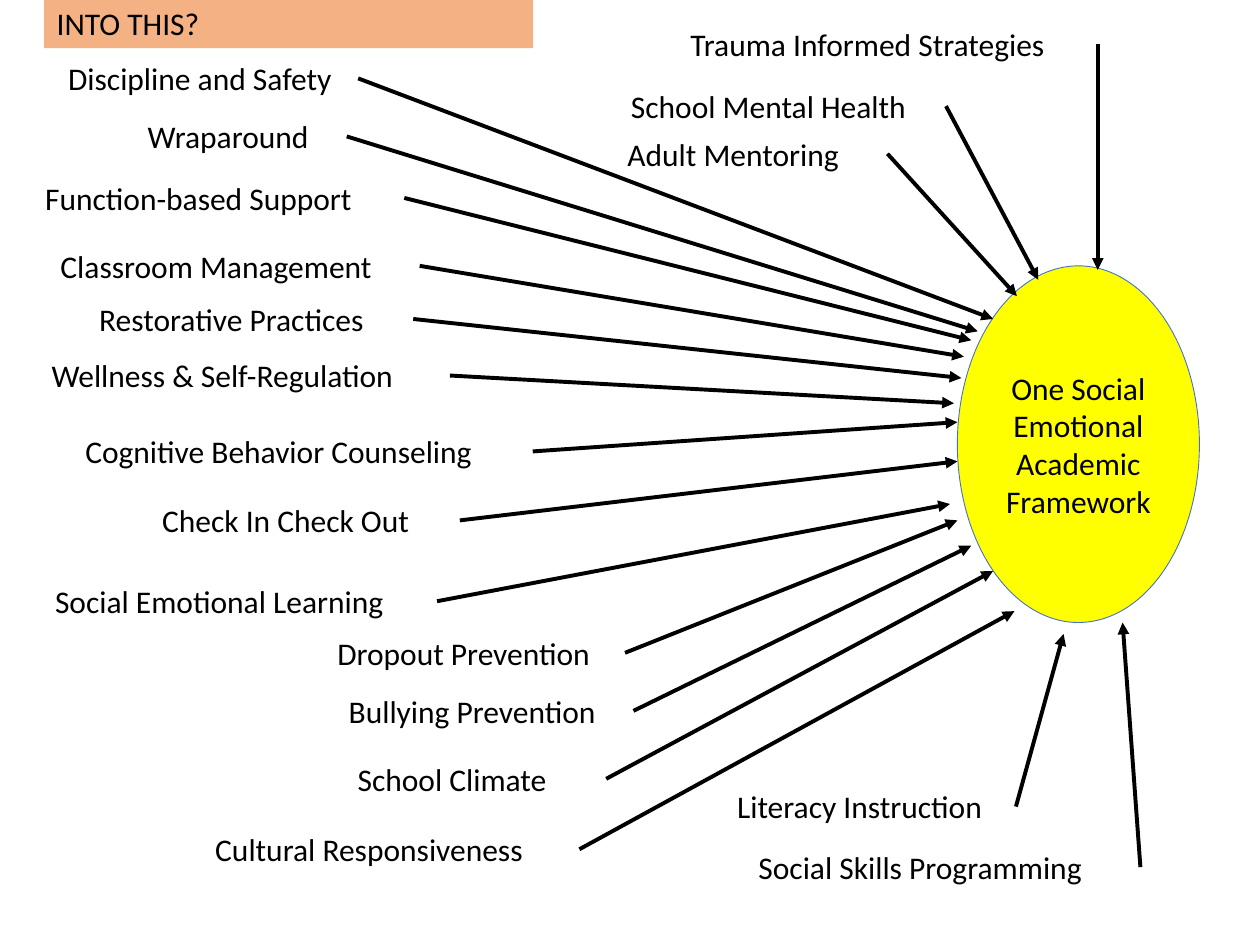
from dataclasses import dataclass

from lxml import etree
from pptx import Presentation
from pptx.dml.color import RGBColor
from pptx.enum.shapes import MSO_CONNECTOR, MSO_SHAPE
from pptx.enum.text import MSO_ANCHOR, MSO_AUTO_SIZE, PP_ALIGN
from pptx.oxml.ns import qn
from pptx.util import Cm, Pt

LEFT, CENTER = PP_ALIGN.LEFT, PP_ALIGN.CENTER
TOP, MIDDLE = MSO_ANCHOR.TOP, MSO_ANCHOR.MIDDLE
NO_FIT = MSO_AUTO_SIZE.NONE
STRAIGHT = MSO_CONNECTOR.STRAIGHT
OVAL = MSO_SHAPE.OVAL

COLORS = {"text": "000000", "arrow": "000000", "hub": "FFFF00",
          "hub_line": "4472C4", "title": "F4B183"}
FONT, SIZE = "Calibri", Pt(18)
LABEL_HEIGHT = 1.02  # cm


@dataclass
class Initiative:
    """A label and the tip of its arrow, in cm; the arrow leaves its right edge."""
    text: str
    left: float
    top: float
    width: float
    tip_x: float
    tip_y: float
    align: PP_ALIGN = LEFT


INITIATIVES = [
    # Left of the hub, from top to bottom
    Initiative("Discipline and Safety", 0.84, 1.07, 6.38, 20.02, 6.43, CENTER),
    Initiative("Wraparound", 2.21, 2.24, 4.78, 19.71, 6.68, CENTER),
    Initiative("Function-based Support", 0.66, 3.48, 7.49, 19.58, 6.86),
    Initiative("Classroom Management", 0.97, 4.85, 7.49, 19.43, 7.19),
    Initiative("Restorative Practices", 1.75, 5.92, 6.58, 19.38, 7.62),
    Initiative("Wellness & Self-Regulation", 0.79, 7.06, 8.28, 19.23, 8.13),
    Initiative("Cognitive Behavior Counseling", 1.47, 8.59, 9.27, 19.3, 8.51),
    Initiative("Check In Check Out", 3.02, 9.98, 6.25, 19.3, 9.3),
    Initiative("Social Emotional Learning", 0.86, 11.61, 7.95, 19.15, 10.16),
    Initiative("Dropout Prevention", 6.55, 12.65, 6.05, 19.3, 10.49),
    Initiative("Bullying Prevention", 6.78, 13.82, 5.99, 19.58, 11),
    Initiative("School Climate", 6.96, 15.19, 5.26, 20.02, 11.51),
    Initiative("Cultural Responsiveness", 4.09, 16.61, 7.59, 20.45, 12.32),
    # Below the hub
    Initiative("Literacy Instruction", 14.61, 15.75, 5.87, 21.44, 12.78),
    Initiative("Social Skills Programming", 15.04, 16.97, 7.95, 22.63, 12.55),
    # Above the hub
    Initiative("Trauma Informed Strategies", 13.67, 0.38, 8.46, 22.13, 5.44),
    Initiative("School Mental Health", 12.47, 1.63, 6.6, 20.93, 5.64),
    Initiative("Adult Mentoring", 12.4, 2.59, 5.49, 20.5, 5.97),
]


def color(name: str) -> RGBColor:
    return RGBColor.from_string(COLORS[name])


def write(sp, text: str, align: PP_ALIGN = LEFT, anchor: MSO_ANCHOR = TOP) -> None:
    tf = sp.text_frame
    tf.word_wrap = True
    tf.auto_size = NO_FIT
    tf.vertical_anchor = anchor
    p = tf.paragraphs[0]
    p.text = text
    p.alignment = align
    p.line_spacing = 1.0
    p.space_before = Pt(0)
    p.font.name, p.font.size = FONT, SIZE
    p.font.color.rgb = color("text")


def add_title(s, text: str) -> None:
    sp = s.shapes.title
    sp.left, sp.top = Cm(0.89), Cm(-0.05)
    sp.width, sp.height = Cm(9.86), Cm(LABEL_HEIGHT)
    sp.fill.solid()
    sp.fill.fore_color.rgb = color("title")
    write(sp, text)


def add_hub(s, text: str) -> None:
    sp = s.shapes.add_shape(OVAL, Cm(19.3), Cm(5.36), Cm(4.88), Cm(7.19))
    sp.shadow.inherit = False
    sp.fill.solid()
    sp.fill.fore_color.rgb = color("hub")
    sp.line.color.rgb = color("hub_line")
    sp.line.width = Pt(0.5)
    write(sp, text, CENTER, MIDDLE)


def add_label(s, item: Initiative) -> None:
    sp = s.shapes.add_textbox(Cm(item.left), Cm(item.top),
                              Cm(item.width), Cm(LABEL_HEIGHT))
    write(sp, item.text, item.align)


def add_arrow(s, item: Initiative) -> None:
    line = s.shapes.add_connector(
        STRAIGHT, Cm(item.left + item.width), Cm(item.top + LABEL_HEIGHT / 2),
        Cm(item.tip_x), Cm(item.tip_y))
    line.line.color.rgb = color("arrow")
    line.line.width = Pt(2.25)
    etree.SubElement(line.line._get_or_add_ln(), qn("a:tailEnd"), type="triangle")
    etree.SubElement(line._element.spPr, qn("a:effectLst"))


def main() -> None:
    prs = Presentation()
    prs.slide_width, prs.slide_height = Cm(25.4), Cm(19.05)
    s = prs.slides.add_slide(prs.slide_layouts[5])  # title only

    add_title(s, "INTO THIS?")
    add_hub(s, "One Social Emotional Academic Framework")
    for item in INITIATIVES:
        add_label(s, item)
        add_arrow(s, item)

    prs.save("out.pptx")


if __name__ == "__main__":
    main()
